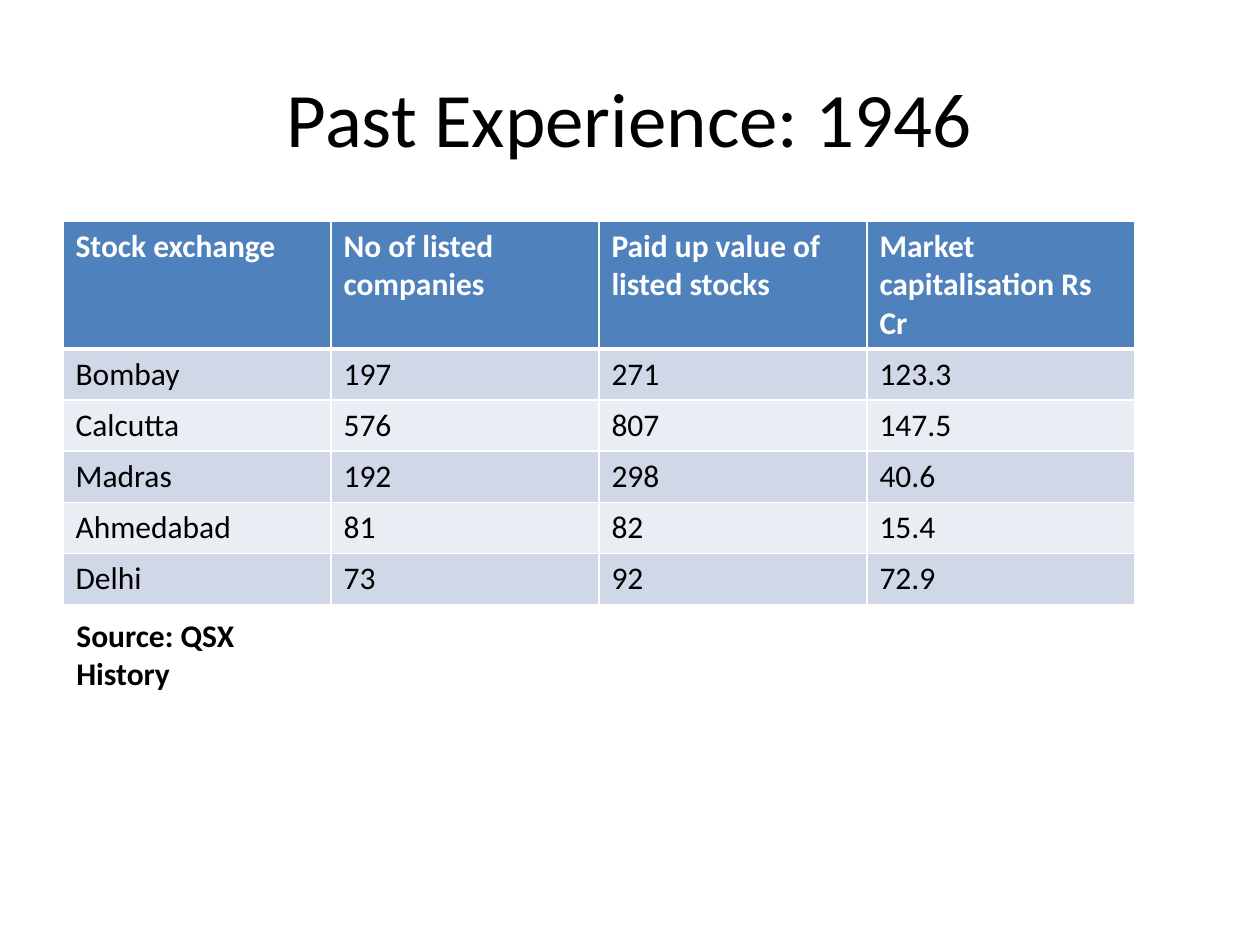
from dataclasses import dataclass

from lxml import etree
from pptx import Presentation
from pptx.dml.color import RGBColor
from pptx.enum.text import MSO_ANCHOR, PP_ALIGN
from pptx.oxml.ns import qn
from pptx.util import Emu, Pt

CENTER = PP_ALIGN.CENTER
MIDDLE = MSO_ANCHOR.MIDDLE
PX_PER_INCH = 126
FONT = "Calibri"
BLACK, WHITE = "000000", "FFFFFF"
HEADER_FILL = "4F81BD"
BAND_FILLS = ("D0D8E8", "E9EDF4")
COLUMN_WIDTH, HEADER_HEIGHT, ROW_HEIGHT = 268, 127, 51

HEADINGS = (
    "Stock exchange",
    "No of listed companies",
    "Paid up value of listed stocks",
    "Market capitalisation Rs Cr",
)


@dataclass(frozen=True)
class Exchange:
    name: str
    companies: str
    paid_up_value: str
    market_cap: str

    def cells(self) -> tuple[str, ...]:
        return self.name, self.companies, self.paid_up_value, self.market_cap


EXCHANGES = (
    Exchange("Bombay", "197", "271", "123.3"),
    Exchange("Calcutta", "576", "807", "147.5"),
    Exchange("Madras", "192", "298", "40.6"),
    Exchange("Ahmedabad", "81", "82", "15.4"),
    Exchange("Delhi", "73", "92", "72.9"),
)


def px(length: int) -> Emu:
    return Emu(round(length * 914400 / PX_PER_INCH))


def color(value: str) -> RGBColor:
    return RGBColor.from_string(value)


def place(shape, left: int, top: int, width: int, height: int) -> None:
    shape.left, shape.top = px(left), px(top)
    shape.width, shape.height = px(width), px(height)


def add_run(paragraph, text: str, size: int, hex_color: str, bold: bool = False) -> None:
    run = paragraph.add_run()
    run.text = text
    run.font.name = FONT
    run.font.size = Pt(size)
    run.font.bold = bold
    run.font.color.rgb = color(hex_color)


def add_border(cell, side: str, points: int) -> None:
    properties = cell._tc.get_or_add_tcPr()
    line = etree.SubElement(properties, qn(f"a:ln{side}"), w=str(Pt(points)))
    fill = etree.SubElement(line, qn("a:solidFill"))
    etree.SubElement(fill, qn("a:srgbClr"), val=WHITE)


def fill_cell(cell, text: str, row: int) -> None:
    is_header = row == 0
    # Borders come before the fill in the cell properties
    widths = {"L": 1, "R": 1, "T": 3 if row == 1 else 1, "B": 3 if is_header else 1}
    for side, points in widths.items():
        add_border(cell, side, points)
    cell.fill.solid()
    cell.fill.fore_color.rgb = color(HEADER_FILL if is_header else BAND_FILLS[(row - 1) % 2])
    add_run(cell.text_frame.paragraphs[0], text, 18, WHITE if is_header else BLACK, is_header)


def add_exchange_table(slide, left: int, top: int) -> None:
    rows = [HEADINGS] + [exchange.cells() for exchange in EXCHANGES]
    width = COLUMN_WIDTH * len(HEADINGS)
    height = HEADER_HEIGHT + ROW_HEIGHT * len(EXCHANGES)
    table = slide.shapes.add_table(
        len(rows), len(HEADINGS), px(left), px(top), px(width), px(height)
    ).table
    for column in table.columns:
        column.width = px(COLUMN_WIDTH)
    for row, texts in enumerate(rows):
        table.rows[row].height = px(ROW_HEIGHT if row else HEADER_HEIGHT)
        for column, text in enumerate(texts):
            fill_cell(table.cell(row, column), text, row)


def main() -> None:
    presentation = Presentation()
    presentation.slide_width, presentation.slide_height = px(1260), px(945)
    slide = presentation.slides.add_slide(presentation.slide_layouts[5])

    # Title
    title = slide.shapes.title
    place(title, 63, 38, 1134, 157)
    title.text_frame.vertical_anchor = MIDDLE
    paragraph = title.text_frame.paragraphs[0]
    paragraph.alignment = CENTER
    add_run(paragraph, "Past Experience: 1946", 44, BLACK)

    # Figures by exchange
    add_exchange_table(slide, 63, 221)

    # Source line
    source = slide.shapes.add_textbox(px(64), px(610), px(281), px(50))
    source.text_frame.word_wrap = False
    add_run(source.text_frame.paragraphs[0], "Source: QSX History", 18, BLACK, bold=True)

    presentation.save("out.pptx")


if __name__ == "__main__":
    main()
